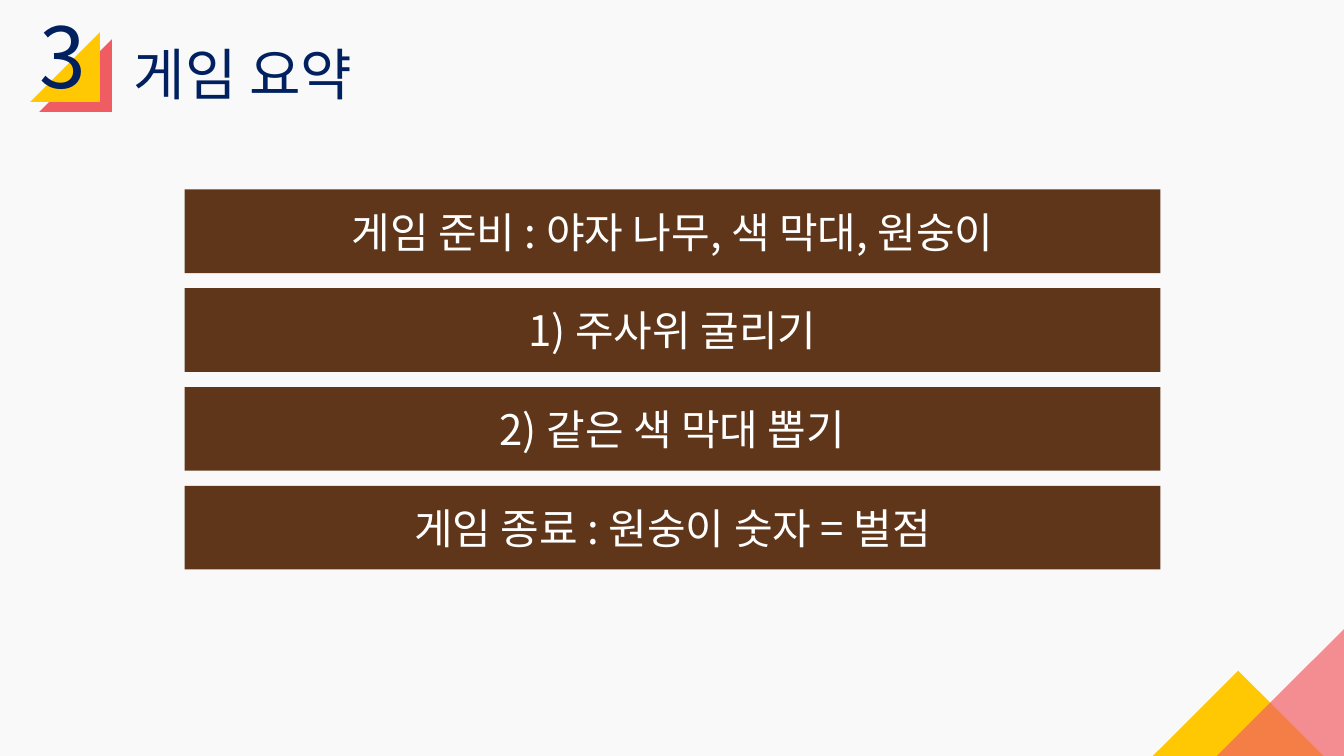
from dataclasses import dataclass

from lxml import etree
from pptx import Presentation
from pptx.dml.color import RGBColor
from pptx.enum.shapes import MSO_SHAPE
from pptx.enum.text import MSO_ANCHOR, MSO_AUTO_SIZE, PP_ALIGN
from pptx.oxml.ns import qn
from pptx.util import Inches, Pt

RECTANGLE = MSO_SHAPE.RECTANGLE
RIGHT_TRIANGLE = MSO_SHAPE.RIGHT_TRIANGLE
MIDDLE = MSO_ANCHOR.MIDDLE
GROW = MSO_AUTO_SIZE.SHAPE_TO_FIT_TEXT
CENTER = PP_ALIGN.CENTER


@dataclass(frozen=True)
class Theme:
    font: str = "Noto Sans CJK KR"
    background: str = "F9F9F9"
    navy: str = "002060"
    brown: str = "5F361A"
    white: str = "FFFFFF"
    yellow: str = "FFC802"
    red: str = "EB1C24"
    coral: str = "F16065"
    number_size: int = 60
    title_size: int = 40
    step_size: int = 30


@dataclass(frozen=True)
class Triangle:
    left: float
    top: float
    side: float
    rotation: int
    color: str
    opacity: int = 100


@dataclass(frozen=True)
class Heading:
    text: str
    left: float
    top: float
    width: float
    height: float
    size: int


THEME = Theme()
TRIANGLES = [
    Triangle(0.39, 0.39, 0.72, 270, THEME.red, 70),
    Triangle(0.3, 0.32, 0.69, 270, THEME.yellow),
    Triangle(11.66, 6.91, 1.24, 135, THEME.yellow),
    Triangle(12.04, 6.24, 1.29, 270, THEME.coral, 70),
]
HEADINGS = [
    Heading("3", 0.29, 0, 0.94, 1.11, THEME.number_size),
    Heading("게임 요약", 1.23, 0.34, 11.27, 0.77, THEME.title_size),
]
STEPS = [
    "게임 준비 : 야자 나무, 색 막대, 원숭이",
    "1) 주사위 굴리기",
    "2) 같은 색 막대 뽑기",
    "게임 종료 : 원숭이 숫자 = 벌점",
]
STEP_LEFT, STEP_TOP, STEP_WIDTH, STEP_HEIGHT = 1.83, 1.88, 9.68, 0.83
STEP_PITCH = 0.98


def add_filled_shape(page, kind, left: float, top: float, width: float,
                     height: float, color: str):
    shape = page.shapes.add_shape(
        kind, Inches(left), Inches(top), Inches(width), Inches(height))
    shape.shadow.inherit = False
    shape.fill.solid()
    shape.fill.fore_color.rgb = RGBColor.from_string(color)
    shape.line.fill.background()
    return shape


def add_triangle(page, triangle: Triangle) -> None:
    shape = add_filled_shape(page, RIGHT_TRIANGLE, triangle.left, triangle.top,
                             triangle.side, triangle.side, triangle.color)
    shape.rotation = triangle.rotation
    if triangle.opacity < 100:
        color = shape.fill._xPr.find(f"{qn('a:solidFill')}/{qn('a:srgbClr')}")
        etree.SubElement(color, qn("a:alpha"), val=str(triangle.opacity * 1000))


def write_text(box, text: str, size: int, color: str, frame_format: dict):
    for name, value in frame_format.items():
        setattr(box.text_frame, name, value)
    para = box.text_frame.paragraphs[0]
    span = para.add_run()
    span.text = text
    for name, value in {"name": THEME.font, "size": Pt(size)}.items():
        setattr(span.font, name, value)
    span.font.color.rgb = RGBColor.from_string(color)
    etree.SubElement(span.font._element, qn("a:ea"), typeface=THEME.font)
    return para


def add_heading(page, heading: Heading) -> None:
    box = page.shapes.add_textbox(Inches(heading.left), Inches(heading.top),
                                  Inches(heading.width), Inches(heading.height))
    write_text(box, heading.text, heading.size, THEME.navy,
               {"word_wrap": True, "auto_size": GROW})


def add_step(page, index: int, text: str) -> None:
    box = add_filled_shape(page, RECTANGLE, STEP_LEFT, STEP_TOP + index * STEP_PITCH,
                           STEP_WIDTH, STEP_HEIGHT, THEME.brown)
    para = write_text(box, text, THEME.step_size, THEME.white,
                      {"word_wrap": True, "vertical_anchor": MIDDLE})
    para.alignment = CENTER


def main() -> None:
    deck = Presentation()
    deck.slide_width = Inches(13.33)
    deck.slide_height = Inches(7.5)
    page = deck.slides.add_slide(deck.slide_layouts[6])
    page.background.fill.solid()
    page.background.fill.fore_color.rgb = RGBColor.from_string(THEME.background)
    for triangle in TRIANGLES:
        add_triangle(page, triangle)
    for heading in HEADINGS:
        add_heading(page, heading)
    for index, text in enumerate(STEPS):
        add_step(page, index, text)
    deck.save("out.pptx")


if __name__ == "__main__":
    main()
